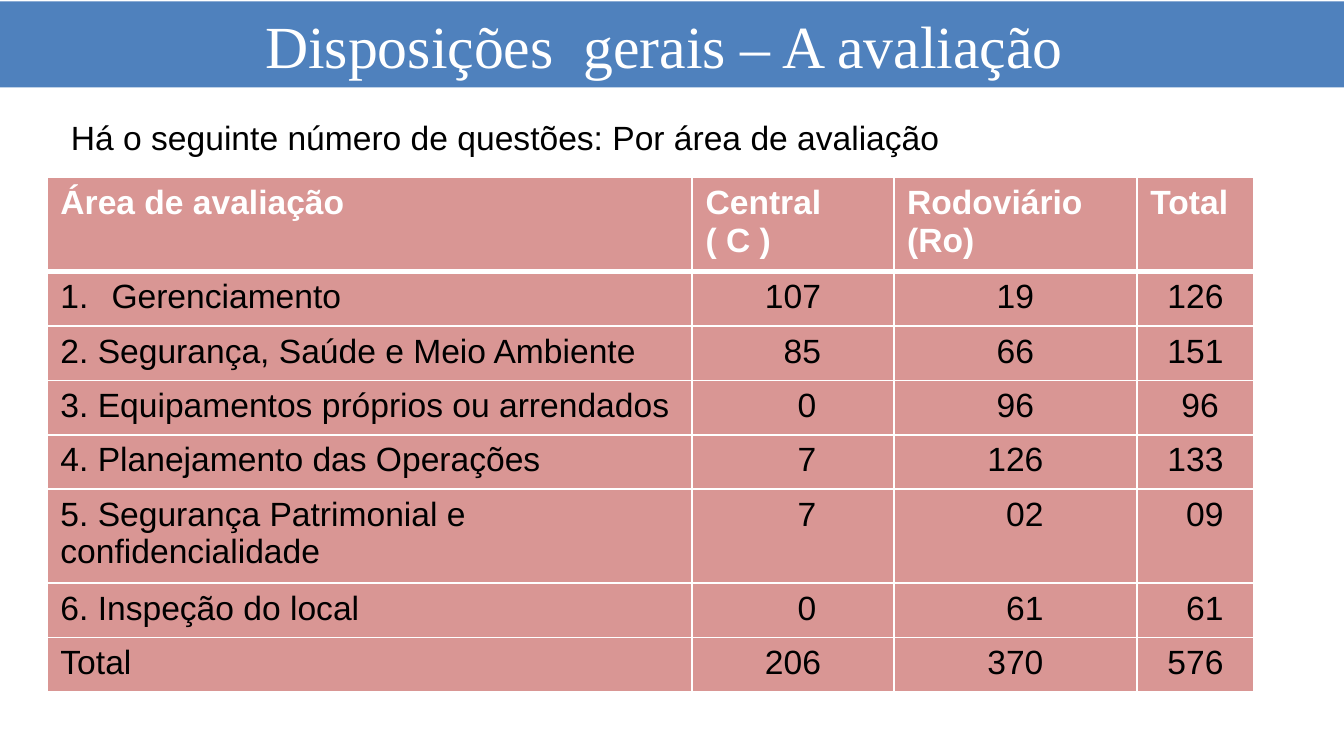
from lxml import etree
from pptx import Presentation
from pptx.dml.color import RGBColor
from pptx.enum.text import MSO_ANCHOR, MSO_AUTO_SIZE, PP_ALIGN
from pptx.oxml.ns import qn
from pptx.util import Inches, Pt

CENTER, LEFT = PP_ALIGN.CENTER, PP_ALIGN.LEFT
MIDDLE = MSO_ANCHOR.MIDDLE
NO_AUTOFIT = MSO_AUTO_SIZE.NONE

BLUE, ROSE, WHITE, BLACK = "4F81BD", "D99694", "FFFFFF", "000000"
TITLE_FONT, BODY_FONT = "Times New Roman", "Arial"
TITLE_ONLY = 5
CELL_MARGIN = 0.1
SPACE_WIDTH = 0.07

COLUMN_WIDTHS = [4.8, 1.5, 1.81, 0.87]
HEADER = ["Área de avaliação", "Central  ( C )", "Rodoviário (Ro)", "Total"]
# Each row: area, figures, and the indent of each figure in space widths
ROWS = [
    ("Gerenciamento", ["107", "19", "126"], [0, 0, 0]),
    ("2. Segurança, Saúde e Meio Ambiente", ["85", "66", "151"], [2, 0, 0]),
    ("3. Equipamentos próprios ou arrendados", ["0", "96", "96"], [3, 0, 1]),
    ("4. Planejamento das Operações", ["7", "126", "133"], [3, 0, 0]),
    ("5. Segurança Patrimonial e confidencialidade", ["7", "02", "09"], [3, 2, 2]),
    ("6. Inspeção do local", ["0", "61", "61"], [3, 2, 2]),
    ("Total", ["206", "370", "576"], [0, 0, 0]),
]


def color(hex_string):
    return RGBColor.from_string(hex_string)


def add_run(paragraph, text, size, font, hex_color, bold=False):
    run = paragraph.add_run()
    run.text = text
    run.font.size = Pt(size)
    run.font.name = font
    run.font.bold = bold
    run.font.color.rgb = color(hex_color)


def place_title(slide, left, top, width, height):
    title = slide.shapes.title
    title.left, title.top = Inches(left), Inches(top)
    title.width, title.height = Inches(width), Inches(height)
    title.fill.solid()
    title.fill.fore_color.rgb = color(BLUE)
    frame = title.text_frame
    frame.auto_size = NO_AUTOFIT
    frame.vertical_anchor = MIDDLE
    frame.margin_right = Inches(0.21)
    paragraph = frame.paragraphs[0]
    paragraph.alignment = CENTER
    add_run(paragraph, "Disposições  gerais – A avaliação", 32, TITLE_FONT, WHITE)


def add_introduction(slide, left, top, width, height):
    box = slide.shapes.add_textbox(
        Inches(left), Inches(top), Inches(width), Inches(height))
    box.text_frame.word_wrap = True
    add_run(box.text_frame.paragraphs[0],
            "Há o seguinte número de questões: Por área de avaliação",
            18, BODY_FONT, BLACK)


def set_borders(cell, top, bottom):
    """Draw white borders; top and bottom are widths in points."""
    properties = cell._tc.get_or_add_tcPr()
    for side, width in (("L", 1), ("R", 1), ("T", top), ("B", bottom)):
        line = etree.SubElement(properties, qn(f"a:ln{side}"), w=str(Pt(width)))
        fill = etree.SubElement(line, qn("a:solidFill"))
        etree.SubElement(fill, qn("a:srgbClr"), val=WHITE)


def number_paragraph(paragraph, indent):
    """Turn the paragraph into an item of a numbered list."""
    properties = paragraph._p.get_or_add_pPr()
    properties.set("marL", str(Inches(indent)))
    properties.set("indent", str(-Inches(indent)))
    etree.SubElement(properties, qn("a:buFont"), typeface="+mj-lt")
    etree.SubElement(properties, qn("a:buAutoNum"), type="arabicPeriod")


def fill_cell(cell, text, alignment=LEFT, indent=0, is_header=False, below_header=False):
    set_borders(cell, 3 if below_header else 1, 3 if is_header else 1)
    cell.fill.solid()
    cell.fill.fore_color.rgb = color(ROSE)
    cell.margin_left = Inches(CELL_MARGIN + indent * SPACE_WIDTH)
    paragraph = cell.text_frame.paragraphs[0]
    paragraph.alignment = alignment
    add_run(paragraph, text, 18, BODY_FONT, WHITE if is_header else BLACK, is_header)


def add_question_table(slide, left, top, width, height):
    table = slide.shapes.add_table(
        len(ROWS) + 1, len(HEADER),
        Inches(left), Inches(top), Inches(width), Inches(height)).table
    for column, share in zip(table.columns, COLUMN_WIDTHS):
        column.width = Inches(width * share / sum(COLUMN_WIDTHS))
    for column_index, text in enumerate(HEADER):
        fill_cell(table.cell(0, column_index), text, is_header=True)
    for row_index, (area, figures, indents) in enumerate(ROWS, 1):
        below_header = row_index == 1
        fill_cell(table.cell(row_index, 0), area, below_header=below_header)
        for column_index, (figure, indent) in enumerate(zip(figures, indents), 1):
            fill_cell(table.cell(row_index, column_index), figure, CENTER, indent,
                      below_header=below_header)
    number_paragraph(table.cell(1, 0).text_frame.paragraphs[0], 0.38)


def main():
    presentation = Presentation()
    presentation.slide_width = Inches(10)
    presentation.slide_height = presentation.slide_width * 9 // 16
    slide = presentation.slides.add_slide(presentation.slide_layouts[TITLE_ONLY])
    place_title(slide, 0, 0.01, 10, 0.64)
    add_introduction(slide, 0.43, 0.82, 7.17, 0.4)
    add_question_table(slide, 0.35, 1.32, 8.98, 3.24)
    presentation.save("out.pptx")


if __name__ == "__main__":
    main()
